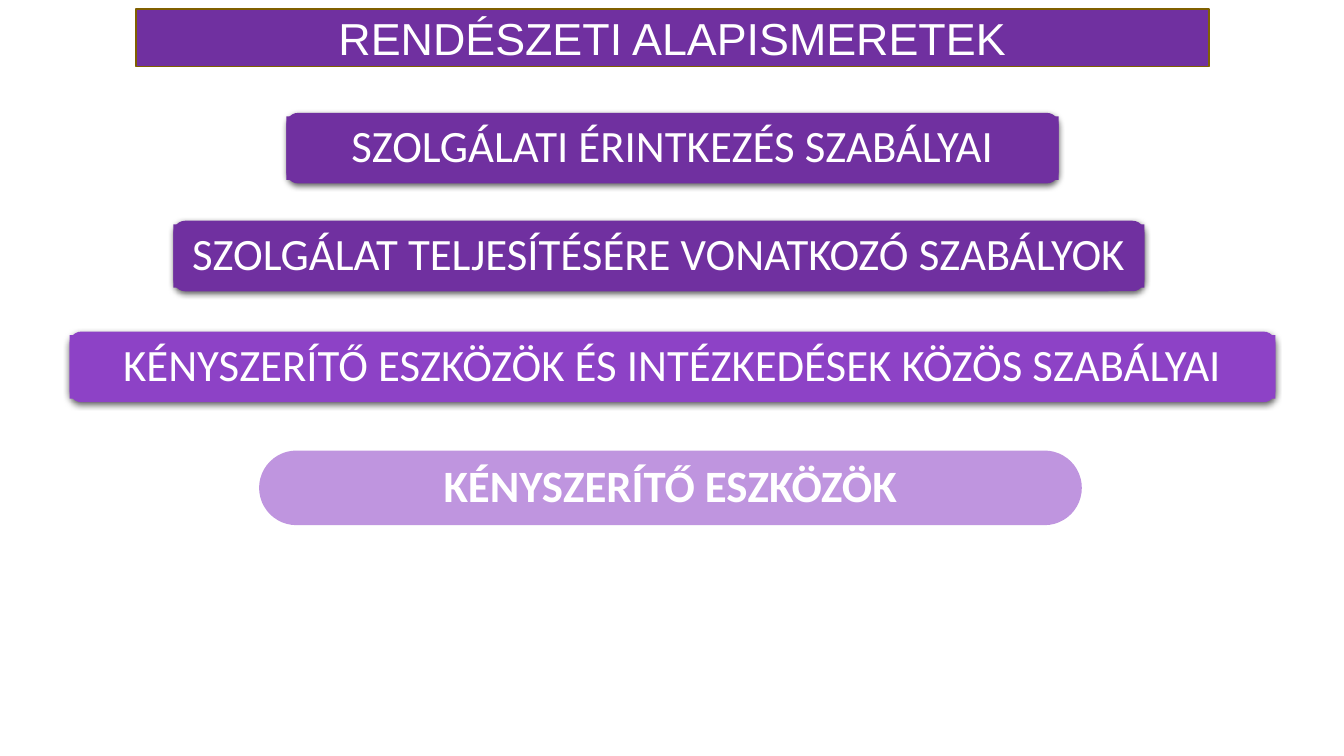
from lxml import etree
from pptx import Presentation
from pptx import util as u
from pptx.dml.color import RGBColor
from pptx.enum import shapes, text
from pptx.oxml.ns import qn

PURPLE, VIOLET, LILAC = "7030A0", "8D42C6", "BF95DF"
WHITE, OLIVE, BLACK = "FFFFFF", "806000", "000000"


def color(code):
    return RGBColor.from_string(code)


class TopicSlide:
    font_size = 32
    bar_height = 0.7
    band_height = 0.63

    def __init__(self, slide):
        self.slide = slide

    def label(self, shape, wording, font, bold=False, inset=(0.1, 0.05), spacing=0.9, after=0):
        frame = shape.text_frame
        frame.word_wrap = True
        frame.auto_size = text.MSO_AUTO_SIZE.NONE
        frame.vertical_anchor = text.MSO_ANCHOR.MIDDLE
        side, edge = map(u.Inches, inset)
        frame.margin_left = frame.margin_right = side
        frame.margin_top = frame.margin_bottom = edge
        paragraph = frame.paragraphs[0]
        paragraph.alignment = text.PP_ALIGN.CENTER
        paragraph.line_spacing = spacing
        paragraph.space_before = u.Pt(0)
        paragraph.space_after = u.Pt(after)
        run = paragraph.add_run()
        run.text = wording
        run.font.name = font
        run.font.size = u.Pt(self.font_size)
        run.font.bold = bold
        run.font.color.rgb = color(WHITE)

    def title(self, wording, left, top, width, height):
        heading = self.slide.shapes.title
        heading.left, heading.top = u.Inches(left), u.Inches(top)
        heading.width, heading.height = u.Inches(width), u.Inches(height)
        heading.fill.solid()
        heading.fill.fore_color.rgb = color(PURPLE)
        heading.line.color.rgb = color(OLIVE)
        heading.line.width = u.Pt(1)
        self.label(heading, wording, "Arial", spacing=1.0, after=3)

    def block(self, parent, kind, left, top, width, height, fill):
        block = parent.add_shape(kind, *map(u.Inches, (left, top, width, height)))
        block.shadow.inherit = False
        block.fill.solid()
        block.fill.fore_color.rgb = color(fill)
        block.line.fill.background()
        return block

    def cast_shadow(self, block):
        effects = block._element.spPr.find(qn("a:effectLst"))
        shadow = etree.SubElement(
            effects, qn("a:outerShdw"), blurRad=str(u.Pt(4.5)),
            dist=str(u.Pt(1.5)), dir="5400000", algn="ctr", rotWithShape="0")
        tint = etree.SubElement(shadow, qn("a:srgbClr"), val=BLACK)
        etree.SubElement(tint, qn("a:alpha"), val="63000")

    def topic(self, wording, left, top, width, fill):
        group = self.slide.shapes.add_group_shape().shapes
        bar = self.block(group, shapes.MSO_SHAPE.ROUNDED_RECTANGLE,
                         left, top, width, self.bar_height, fill)
        self.cast_shadow(bar)
        band_top = top + (self.bar_height - self.band_height) / 2
        band = self.block(group, shapes.MSO_SHAPE.RECTANGLE,
                          left, band_top, width, self.band_height, fill)
        self.label(band, wording, "Calibri")

    def pill(self, wording, left, top, width, height, fill):
        pill = self.block(self.slide.shapes, shapes.MSO_SHAPE.ROUNDED_RECTANGLE,
                          left, top, width, height, fill)
        pill.adjustments[0] = 0.5
        self.label(pill, wording, "Calibri", bold=True, inset=(0.25, 0.25))


def main():
    deck = Presentation()
    deck.slide_width, deck.slide_height = u.Inches(13.33), u.Inches(7.5)
    page = TopicSlide(deck.slides.add_slide(deck.slide_layouts[5]))

    page.title("RENDÉSZETI ALAPISMERETEK", 1.35, 0.09, 10.64, 0.57)
    topics = [
        ("SZOLGÁLATI ÉRINTKEZÉS SZABÁLYAI", 2.84, 1.12, 7.66, PURPLE),
        ("SZOLGÁLAT TELJESÍTÉSÉRE VONATKOZÓ SZABÁLYOK", 1.72, 2.19, 9.63, PURPLE),
        ("KÉNYSZERÍTŐ ESZKÖZÖK ÉS INTÉZKEDÉSEK KÖZÖS SZABÁLYAI", 0.69, 3.29, 11.96, VIOLET),
    ]
    for topic in topics:
        page.topic(*topic)
    page.pill("KÉNYSZERÍTŐ ESZKÖZÖK", 2.57, 4.47, 8.16, 0.74, LILAC)

    deck.save("out.pptx")


if __name__ == "__main__":
    main()
